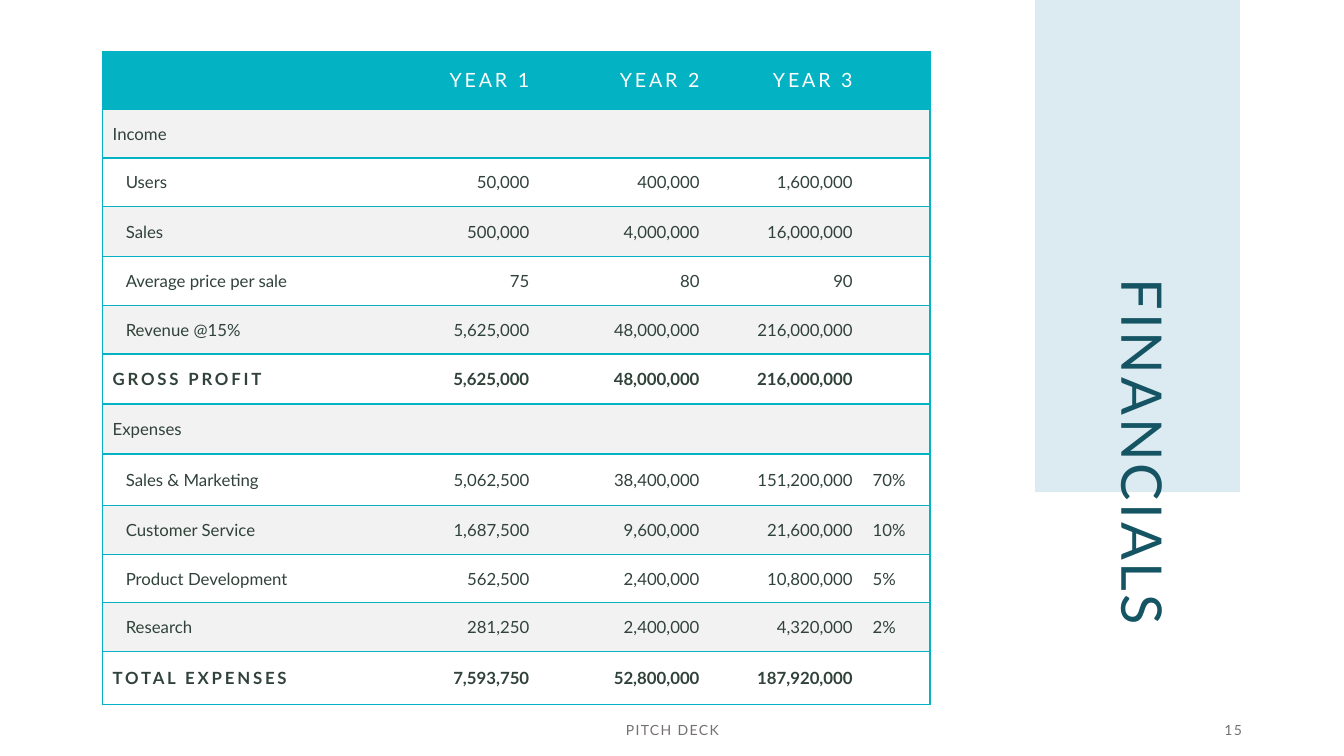
import dataclasses

import lxml.etree
import pptx
import pptx.dml.color
import pptx.enum.shapes
import pptx.enum.text
import pptx.oxml.ns
import pptx.util

Cm = pptx.util.Cm
Align = pptx.enum.text.PP_ALIGN
Anchor = pptx.enum.text.MSO_ANCHOR


@dataclasses.dataclass(frozen=True)
class Theme:
    font: str = "Lato"
    teal: str = "04B3C3"
    title: str = "155463"
    panel: str = "DCEAF1"
    band: str = "F2F2F2"
    white: str = "FFFFFF"
    body: str = "30423A"
    footer: str = "767171"
    title_size: int = 40
    header_size: int = 14
    body_size: int = 12
    footer_size: int = 10


@dataclasses.dataclass(frozen=True)
class Row:
    label: str
    height: float
    values: tuple[str, ...] = ()
    kind: str = "item"


@dataclasses.dataclass(frozen=True)
class Label:
    text: str
    left: float
    top: float
    width: float
    height: float
    size: int
    color: str
    spacing: int
    align: Align
    rotation: int = 0
    line_spacing: float = 1.0


THEME = Theme()
COLUMN_WIDTHS = (6.73, 4.27, 4.29, 3.86, 1.7)
ITEM_INDENT = 0.33
CELL_MARGIN = 0.25

ROWS = (
    Row("", 1.45, ("YEAR 1", "YEAR 2", "YEAR 3"), "header"),
    Row("Income", 1.23, kind="section"),
    Row("Users", 1.23, ("50,000", "400,000", "1,600,000")),
    Row("Sales", 1.25, ("500,000", "4,000,000", "16,000,000")),
    Row("Average price per sale", 1.23, ("75", "80", "90")),
    Row("Revenue @15%", 1.23, ("5,625,000", "48,000,000", "216,000,000")),
    Row("GROSS PROFIT", 1.26, ("5,625,000", "48,000,000", "216,000,000"), "total"),
    Row("Expenses", 1.26, kind="section"),
    Row("Sales & Marketing", 1.29, ("5,062,500", "38,400,000", "151,200,000", "70%")),
    Row("Customer Service", 1.25, ("1,687,500", "9,600,000", "21,600,000", "10%")),
    Row("Product Development", 1.21, ("562,500", "2,400,000", "10,800,000", "5%")),
    Row("Research", 1.22, ("281,250", "2,400,000", "4,320,000", "2%")),
    Row("TOTAL EXPENSES", 1.35, ("7,593,750", "52,800,000", "187,920,000"), "total"),
)

LABELS = (
    Label("FINANCIALS", 23.14, 10.92, 11.05, 2.77, THEME.title_size, THEME.title,
          2, Align.LEFT, rotation=90, line_spacing=0.8),
    Label("PITCH DECK", 11.23, 18.11, 11.43, 0.56, THEME.footer_size, THEME.footer,
          1, Align.CENTER),
    Label("15", 23.93, 18.11, 7.62, 0.56, THEME.footer_size, THEME.footer,
          1, Align.RIGHT),
)


def rgb(color: str) -> pptx.dml.color.RGBColor:
    return pptx.dml.color.RGBColor.from_string(color)


def write_text(text_frame, text: str, *, size: int, color: str, align=Align.LEFT,
               bold: bool = False, spacing: int = 0, line_spacing: float = 1.0) -> None:
    """Fill the first paragraph; spacing is the letter spacing in points."""
    paragraph = text_frame.paragraphs[0]
    paragraph.alignment = align
    paragraph.line_spacing = line_spacing
    run = paragraph.add_run()
    run.text = text
    run.font.name = THEME.font
    run.font.size = pptx.util.Pt(size)
    run.font.bold = bold
    run.font.color.rgb = rgb(color)
    run.font._element.set("spc", str(spacing * 100))


def set_borders(cell, column: int) -> None:
    """Rule every row, and close the table at its outer left and right edges."""
    properties = cell._tc.get_or_add_tcPr()
    visible = {"lnL": column == 0, "lnR": column == len(COLUMN_WIDTHS) - 1,
               "lnT": True, "lnB": True}
    for tag, shown in visible.items():
        line = lxml.etree.SubElement(properties, pptx.oxml.ns.qn(f"a:{tag}"))
        if shown:
            line.set("w", str(pptx.util.Pt(1)))
            fill = lxml.etree.SubElement(line, pptx.oxml.ns.qn("a:solidFill"))
            color = lxml.etree.SubElement(fill, pptx.oxml.ns.qn("a:srgbClr"))
            color.set("val", THEME.teal)
        else:
            lxml.etree.SubElement(line, pptx.oxml.ns.qn("a:noFill"))


def fill_cell(cell, row: Row, row_index: int, column: int) -> None:
    header = row.kind == "header"
    total = row.kind == "total"
    set_borders(cell, column)
    band = THEME.band if row_index % 2 else THEME.white
    cell.fill.solid()
    cell.fill.fore_color.rgb = rgb(THEME.teal if header else band)
    cell.vertical_anchor = Anchor.MIDDLE
    indented = column == 0 and row.kind == "item"
    cell.margin_left = Cm(CELL_MARGIN + (ITEM_INDENT if indented else 0))
    cell.margin_right = Cm(CELL_MARGIN)
    texts = (row.label, *row.values)
    if column < len(texts) and texts[column]:
        write_text(
            cell.text_frame, texts[column],
            size=THEME.header_size if header else THEME.body_size,
            color=THEME.white if header else THEME.body,
            align=Align.RIGHT if 1 <= column <= 3 else Align.LEFT,
            bold=total,
            spacing=2 if header or (total and column == 0) else 0,
        )


def add_financial_table(slide) -> None:
    frame = slide.shapes.add_table(
        len(ROWS), len(COLUMN_WIDTHS), Cm(2.59), Cm(1.3),
        Cm(sum(COLUMN_WIDTHS)), Cm(sum(row.height for row in ROWS)))
    table = frame.table
    table.first_row = False
    table.horz_banding = False
    for column, width in enumerate(COLUMN_WIDTHS):
        table.columns[column].width = Cm(width)
    for row_index, row in enumerate(ROWS):
        table.rows[row_index].height = Cm(row.height)
        for column in range(len(COLUMN_WIDTHS)):
            fill_cell(table.cell(row_index, column), row, row_index, column)


def add_panel(slide) -> None:
    shape = slide.shapes.add_shape(
        pptx.enum.shapes.MSO_SHAPE.RECTANGLE, Cm(26.09), Cm(0), Cm(5.16), Cm(12.4))
    shape.shadow.inherit = False
    shape.fill.solid()
    shape.fill.fore_color.rgb = rgb(THEME.panel)
    shape.line.fill.background()


def add_label(slide, label: Label) -> None:
    shape = slide.shapes.add_textbox(
        Cm(label.left), Cm(label.top), Cm(label.width), Cm(label.height))
    shape.rotation = label.rotation
    text_frame = shape.text_frame
    text_frame.word_wrap = True
    text_frame.vertical_anchor = Anchor.MIDDLE
    write_text(text_frame, label.text, size=label.size, color=label.color,
               align=label.align, spacing=label.spacing,
               line_spacing=label.line_spacing)


def main() -> None:
    presentation = pptx.Presentation()
    presentation.slide_width = Cm(33.87)
    presentation.slide_height = Cm(19.05)
    slide = presentation.slides.add_slide(presentation.slide_layouts[6])
    add_panel(slide)
    add_financial_table(slide)
    for label in LABELS:
        add_label(slide, label)
    presentation.save("out.pptx")


if __name__ == "__main__":
    main()
